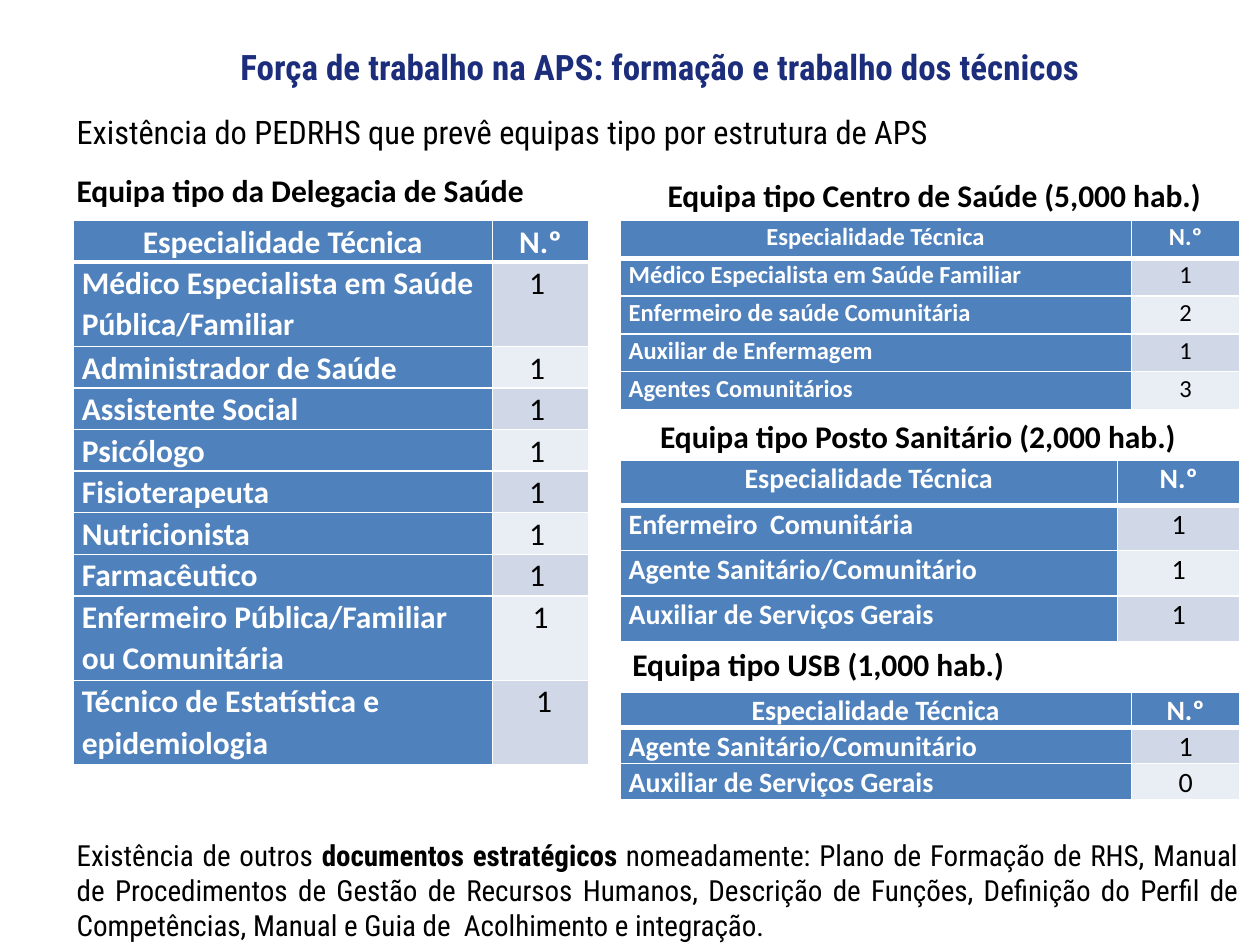
from lxml.etree import SubElement
from pptx import Presentation
from pptx.dml.color import RGBColor
from pptx.enum.text import MSO_ANCHOR, PP_ALIGN
from pptx.oxml.ns import qn
from pptx.util import Inches, Pt

BLUE, NAVY, WHITE, BLACK = "4F81BD", "1B2D7B", "FFFFFF", "000000"
BANDS = ("D0D8E8", "E9EDF4")
HEADER = ("Especialidade Técnica", "N.º")
TITLE_FONT, TABLE_FONT = "Roboto Condensed", "Calibri"

# Left, top, column widths, row heights, text size, rows
TEAM_TABLES = [
    (0.58, 1.75, (3.33, 0.76), (0.33, 0.67) + (0.33,) * 6 + (0.67, 0.67), 18, [
        ("Médico Especialista em Saúde Pública/Familiar", "1 "),
        ("Administrador de Saúde", "1 "),
        ("Assistente Social", "1 "),
        ("Psicólogo", "1 "),
        ("Fisioterapeuta", "1 "),
        ("Nutricionista", "1 "),
        ("Farmacêutico", "1 "),
        ("Enfermeiro Pública/Familiar ou Comunitária", "1"),
        ("Técnico de Estatística e epidemiologia", " 1"),
    ]),
    (4.92, 1.75, (4.06, 0.86), (0.3,) * 5, 14, [
        ("Médico Especialista em Saúde Familiar", "1"),
        ("Enfermeiro de saúde Comunitária", "2"),
        ("Auxiliar de Enfermagem", "1"),
        ("Agentes Comunitários", "3"),
    ]),
    (4.92, 3.65, (3.95, 0.97), (0.36,) * 4, 16, [
        ("Enfermeiro  Comunitária", "1"),
        ("Agente Sanitário/Comunitário", "1"),
        ("Auxiliar de Serviços Gerais", "1"),
    ]),
    (4.92, 5.49, (4.06, 0.86), (0.28,) * 3, 16, [
        ("Agente Sanitário/Comunitário", "1"),
        ("Auxiliar de Serviços Gerais", "0"),
    ]),
]

# Left, top, width, text
TEAM_HEADINGS = [
    (0.51, 1.31, 4.63, "Equipa tipo da Delegacia de Saúde"),
    (5.2, 1.35, 4.63, "Equipa tipo Centro de Saúde (5,000 hab.)"),
    (5.14, 3.26, 4.69, "Equipa tipo Posto Sanitário (2,000 hab.)"),
    (4.92, 5.07, 5, "Equipa tipo USB (1,000 hab.)"),
]


def color(hex_string):
    return RGBColor.from_string(hex_string)


def format_run(run, size, font_name, hex_string=BLACK, bold=False):
    run.font.size = Pt(size)
    run.font.name = font_name
    run.font.color.rgb = color(hex_string)
    run.font.bold = bold


def add_title(slide, text):
    title = slide.shapes.title
    title.left, title.top = Inches(0.74), Inches(0.19)
    title.width, title.height = Inches(9), Inches(0.68)
    title.text_frame.text = text
    title.text_frame.vertical_anchor = MSO_ANCHOR.MIDDLE
    paragraph = title.text_frame.paragraphs[0]
    paragraph.alignment = PP_ALIGN.CENTER
    format_run(paragraph.runs[0], 20, TITLE_FONT, NAVY, True)


def add_text(slide, left, top, width, height, parts, size, font_name,
             alignment=PP_ALIGN.LEFT, anchor=MSO_ANCHOR.TOP):
    """Add one paragraph made of (text, bold) parts."""
    box = slide.shapes.add_textbox(
        Inches(left), Inches(top), Inches(width), Inches(height))
    frame = box.text_frame
    frame.word_wrap = True
    frame.vertical_anchor = anchor
    paragraph = frame.paragraphs[0]
    paragraph.alignment = alignment
    for text, bold in parts:
        run = paragraph.add_run()
        run.text = text
        format_run(run, size, font_name, bold=bold)


def set_borders(cell, row_index):
    """Draw white cell lines, with a thick one under the header."""
    properties = cell._tc.get_or_add_tcPr()
    widths = {"L": 1, "R": 1, "T": 3 if row_index == 1 else 1,
              "B": 3 if row_index == 0 else 1}
    for side, width in widths.items():
        line = SubElement(properties, qn(f"a:ln{side}"), w=str(Pt(width)))
        fill = SubElement(line, qn("a:solidFill"))
        SubElement(fill, qn("a:srgbClr"), val=WHITE)


def format_cell(cell, text, row_index, column_index, size):
    is_header, is_number = row_index == 0, column_index == 1
    is_value = is_number and not is_header
    set_borders(cell, row_index)
    cell.fill.solid()
    cell.fill.fore_color.rgb = color(
        BANDS[(row_index - 1) % 2] if is_value else BLUE)
    cell.margin_left = cell.margin_right = Inches(0.07)
    cell.margin_top = cell.margin_bottom = 0
    cell.text_frame.text = text
    paragraph = cell.text_frame.paragraphs[0]
    centred = is_header or is_number
    paragraph.alignment = PP_ALIGN.CENTER if centred else PP_ALIGN.LEFT
    paragraph.line_spacing = 1.07
    format_run(paragraph.runs[0], size, TABLE_FONT,
               BLACK if is_value else WHITE, not is_value)


def add_team_table(slide, left, top, widths, heights, size, rows):
    table = slide.shapes.add_table(
        len(heights), len(widths), Inches(left), Inches(top),
        Inches(sum(widths)), Inches(sum(heights))).table
    for column, width in zip(table.columns, widths):
        column.width = Inches(width)
    for row, height in zip(table.rows, heights):
        row.height = Inches(height)
    for row_index, values in enumerate([HEADER, *rows]):
        for column_index, text in enumerate(values):
            format_cell(table.cell(row_index, column_index), text,
                        row_index, column_index, size)


def main():
    presentation = Presentation()
    presentation.slide_width, presentation.slide_height = Inches(10), Inches(7.5)
    slide = presentation.slides.add_slide(presentation.slide_layouts[5])

    # Title and introduction
    add_title(slide, "Força de trabalho na APS: formação e trabalho dos técnicos")
    add_text(slide, 0.51, 0.84, 9.41, 0.42,
             [("Existência do PEDRHS que prevê equipas tipo por estrutura de APS", False)],
             18.5, TITLE_FONT, PP_ALIGN.JUSTIFY)

    # Team tables and their headings
    for team_table in TEAM_TABLES:
        add_team_table(slide, *team_table)
    for left, top, width, text in TEAM_HEADINGS:
        add_text(slide, left, top, width, 0.4, [(text, True)], 18, TABLE_FONT,
                 anchor=MSO_ANCHOR.MIDDLE)

    # Closing note
    add_text(slide, 0.51, 6.6, 9.41, 0.9, [
        ("Existência de outros ", False),
        ("documentos estratégicos ", True),
        ("nomeadamente: Plano de Formação de RHS, Manual de Procedimentos de "
         "Gestão de Recursos Humanos, Descrição de Funções, Definição do Perfil "
         "de Competências, Manual e Guia de  Acolhimento e integração.", False),
    ], 16.6, TITLE_FONT, PP_ALIGN.JUSTIFY)

    presentation.save("out.pptx")


if __name__ == "__main__":
    main()
